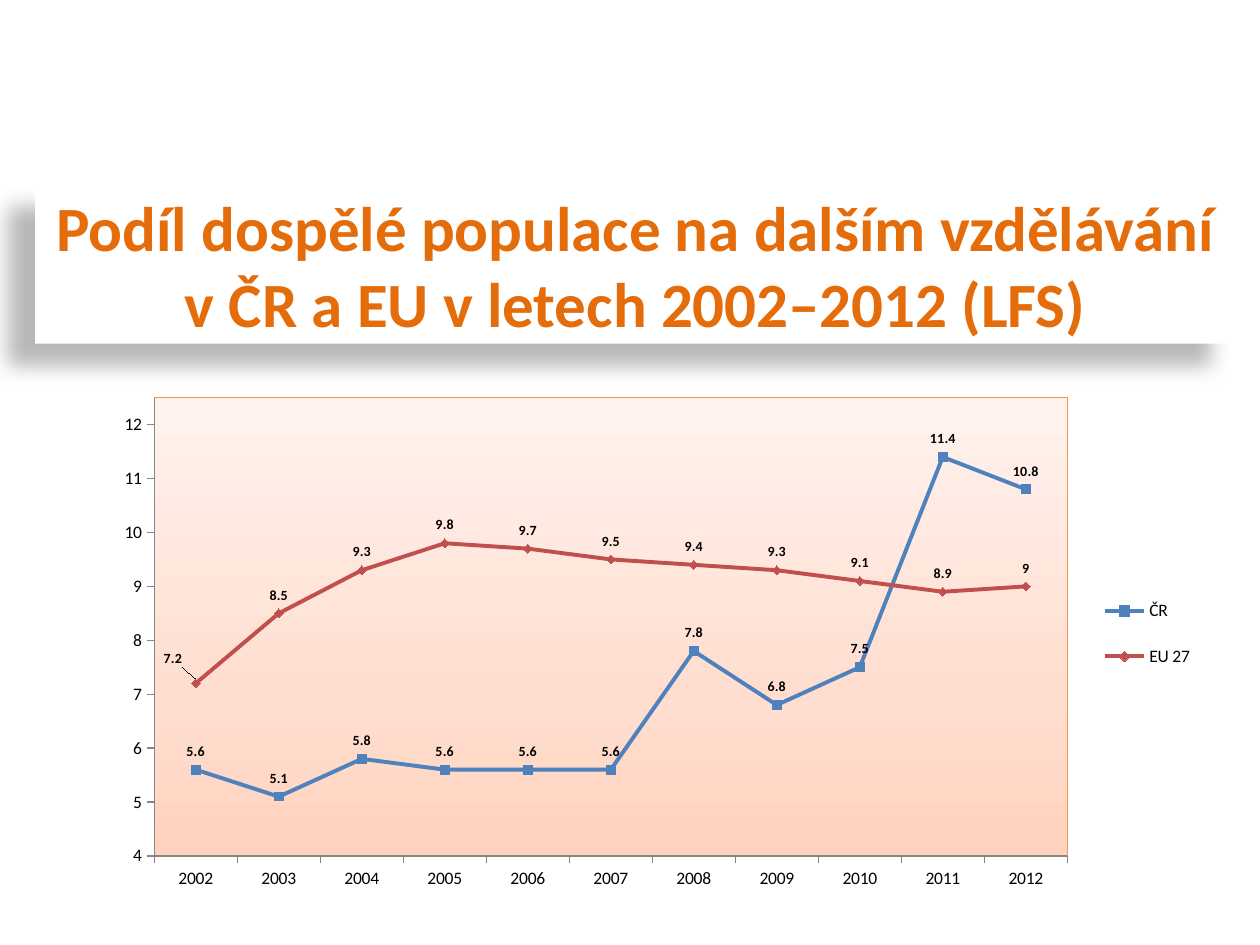
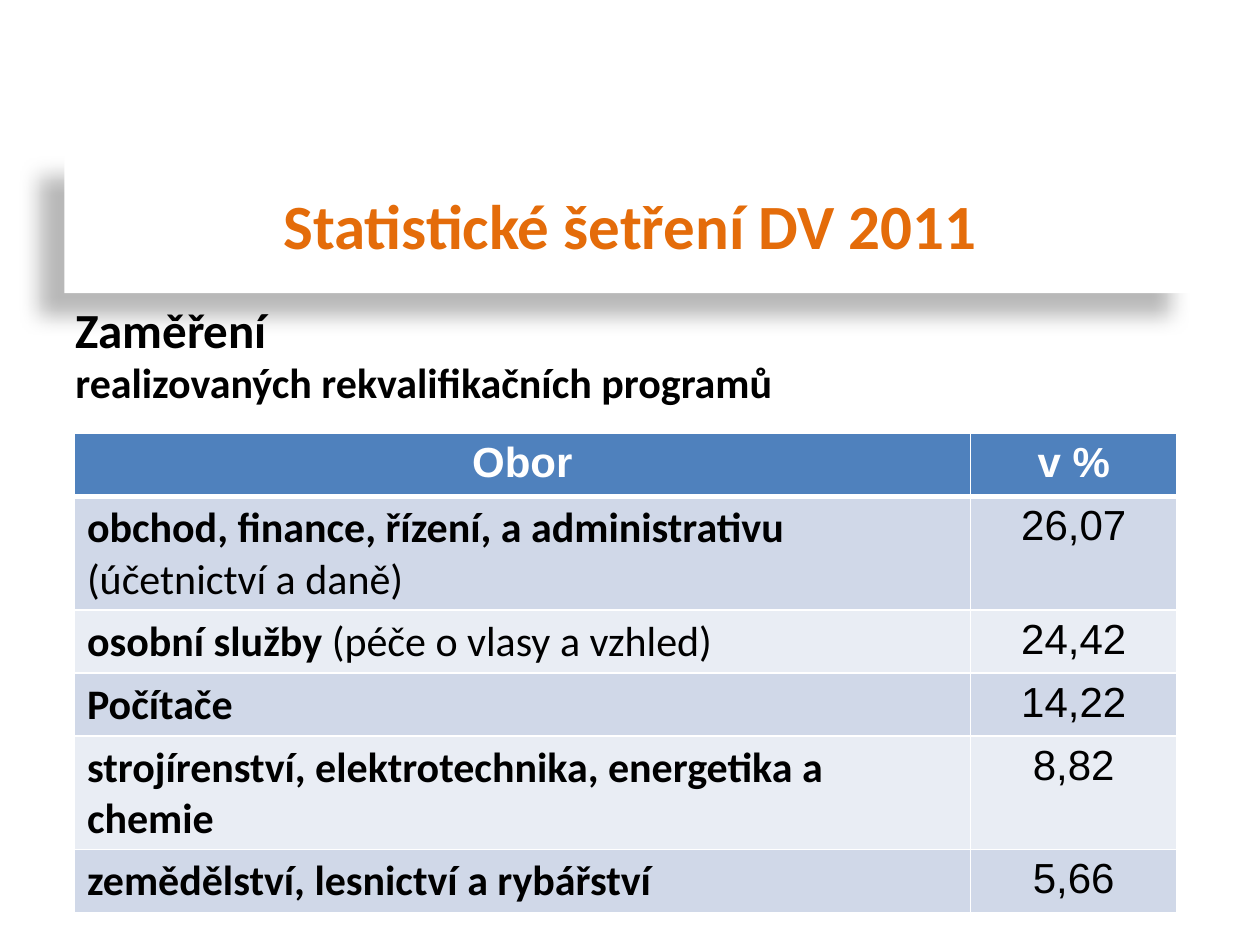
import pptx
import pptx.chart.data
import pptx.dml.color
import pptx.enum.chart
import pptx.enum.shapes
import pptx.enum.text
import pptx.oxml
import pptx.oxml.ns
import pptx.util

Cm = pptx.util.Cm
Pt = pptx.util.Pt
RGBColor = pptx.dml.color.RGBColor
ALIGN = pptx.enum.text.PP_ALIGN

WHITE = RGBColor(0xFF, 0xFF, 0xFF)
BLACK = RGBColor(0x00, 0x00, 0x00)
TITLE_ORANGE = RGBColor(0xE4, 0x6C, 0x0A)
FRAME_ORANGE = RGBColor(0xF7, 0x96, 0x46)
BLUE = RGBColor(0x4F, 0x81, 0xBD)
RED = RGBColor(0xC0, 0x50, 0x4D)
AXIS_GREY = RGBColor(0x86, 0x86, 0x86)
DARK_BAND = RGBColor(0xD0, 0xD8, 0xE8)
LIGHT_BAND = RGBColor(0xE9, 0xED, 0xF4)
PLOT_GRADIENT = (
    (0, RGBColor(0xFF, 0xD2, 0xBD)),
    (35, RGBColor(0xFF, 0xDE, 0xD0)),
    (100, RGBColor(0xFF, 0xF2, 0xED)),
)

TITLE_FONT = {"name": "Calibri", "size": Pt(36), "bold": True}
BODY_FONT = {"name": "Calibri", "size": Pt(24), "bold": True}
NUMBER_FONT = {"name": "Arial", "size": Pt(24), "bold": False}
CHART_FONT = {"name": "Calibri", "size": Pt(10), "bold": False}
LABEL_FONT = {"name": "Calibri", "size": Pt(8), "bold": True}

YEARS = [str(year) for year in range(2002, 2013)]
CZECH_SHARE = (5.6, 5.1, 5.8, 5.6, 5.6, 5.6, 7.8, 6.8, 7.5, 11.4, 10.8)
EU_SHARE = (7.2, 8.5, 9.3, 9.8, 9.7, 9.5, 9.4, 9.3, 9.1, 8.9, 9)
PROGRAMMES = (
    ("obchod, finance, řízení, a administrativu", " (účetnictví a daně)", "26,07"),
    ("osobní služby", " (péče o vlasy a vzhled)", "24,42"),
    ("Počítače", "", "14,22"),
    ("strojírenství, elektrotechnika, energetika a chemie", "", "8,82"),
    ("zemědělství, lesnictví a rybářství", "", "5,66"),
)


def apply_format(target, values):
    """Set every attribute of target that values names."""
    for name, value in values.items():
        setattr(target, name, value)


def style_font(font, values, color=BLACK):
    """Apply font values and a colour."""
    apply_format(font, values)
    font.color.rgb = color


def make_element(xml):
    """Make an element from XML that uses the a and c prefixes."""
    head, mark, tail = xml.partition(">")
    slash = "/" if head.endswith("/") else ""
    names = pptx.oxml.ns.nsdecls("a", "c")
    return pptx.oxml.parse_xml(f"{head.rstrip('/')} {names}{slash}{mark}{tail}")


def manual_layout(places, inner=False, edge=True):
    """Return a chart layout element for places such as x, y, w and h."""
    parts = ['<c:layoutTarget val="inner"/>'] if inner else []
    if edge:
        parts += [f'<c:{axis}Mode val="edge"/>' for axis in "xy"]
    parts += [f'<c:{key} val="{value}"/>' for key, value in places.items()]
    return make_element(
        f"<c:layout><c:manualLayout>{''.join(parts)}</c:manualLayout></c:layout>")


class Deck:
    """Hold the presentation, its style and the current slide."""

    def __init__(self):
        """Start a presentation of 4:3 slides."""
        self.presentation = pptx.Presentation()
        apply_format(self.presentation, {"slide_width": Cm(25.4), "slide_height": Cm(19.05)})
        self.slide = None

    def new_slide(self):
        """Add a blank white slide and make it current."""
        self.slide = self.presentation.slides.add_slide(self.presentation.slide_layouts[6])
        self.slide.background.fill.solid()
        self.slide.background.fill.fore_color.rgb = WHITE

    def text_run(self, paragraph, text, values, color=BLACK):
        """Add one run to a paragraph."""
        run = paragraph.add_run()
        run.text = text
        style_font(run.font, values, color)

    def title(self, lines, left, top, width, height):
        """Add a white title panel with a soft shadow to the lower left."""
        shape = self.slide.shapes.add_shape(
            pptx.enum.shapes.MSO_SHAPE.RECTANGLE, Cm(left), Cm(top), Cm(width), Cm(height))
        shape.fill.solid()
        shape.fill.fore_color.rgb = WHITE
        shape.line.fill.background()
        shape.shadow.inherit = False
        effects = shape._element.spPr.find(pptx.oxml.ns.qn("a:effectLst"))
        effects.append(make_element(
            f'<a:outerShdw blurRad="{Pt(11.8)}" dist="{Pt(19.7)}" dir="{141 * 60000}" '
            'algn="ctr" rotWithShape="0"><a:srgbClr val="000000">'
            '<a:alpha val="28000"/></a:srgbClr></a:outerShdw>'))
        frame = shape.text_frame
        apply_format(frame, {"word_wrap": True,
                             "vertical_anchor": pptx.enum.text.MSO_ANCHOR.MIDDLE})
        for index, line in enumerate(lines):
            paragraph = frame.add_paragraph() if index else frame.paragraphs[0]
            paragraph.alignment = ALIGN.CENTER
            self.text_run(paragraph, line, TITLE_FONT, TITLE_ORANGE)

    def subtitle(self, lines, left, top, width, height):
        """Add hanging bold lines given as text and size."""
        box = self.slide.shapes.add_textbox(Cm(left), Cm(top), Cm(width), Cm(height))
        frame = box.text_frame
        frame.word_wrap = True
        for index, (line, size) in enumerate(lines):
            paragraph = frame.add_paragraph() if index else frame.paragraphs[0]
            properties = paragraph._p.get_or_add_pPr()
            properties.set("marL", str(Cm(2.06)))
            properties.set("indent", str(Cm(-0.79)))
            paragraph.line_spacing = 0.8
            if index:
                paragraph.space_before = Pt(size * 0.2)
            self.text_run(paragraph, line, BODY_FONT | {"size": Pt(size)})

    def cell(self, cell, runs, fill, alignment, top=1, bottom=1):
        """Fill one table cell with runs, a colour and white borders."""
        properties = cell._tc.get_or_add_tcPr()
        for side, width in zip("LRTB", (1, 1, top, bottom)):
            properties.append(make_element(
                f'<a:ln{side} w="{Pt(width)}"><a:solidFill><a:srgbClr val="{WHITE}"/>'
                f"</a:solidFill></a:ln{side}>"))
        cell.fill.solid()
        cell.fill.fore_color.rgb = fill
        paragraph = cell.text_frame.paragraphs[0]
        paragraph.alignment = alignment
        for text, values, color in runs:
            if text:
                self.text_run(paragraph, text, values, color)

    def table(self, header, rows, left, top, widths, row_height):
        """Add a banded table of topics and shares."""
        count = len(rows) + 1
        table = self.slide.shapes.add_table(
            count, len(widths), Cm(left), Cm(top),
            Cm(sum(widths)), Cm(row_height * count)).table
        apply_format(table, {"first_row": False, "horz_banding": False})
        for column, width in zip(table.columns, widths):
            column.width = Cm(width)
        for row in table.rows:
            row.height = Cm(row_height)
        for index, text in enumerate(header):
            self.cell(table.cell(0, index), [(text, NUMBER_FONT | {"bold": True}, WHITE)],
                      BLUE, ALIGN.CENTER, bottom=3)
        for index, (topic, detail, share) in enumerate(rows, 1):
            fill = DARK_BAND if index % 2 else LIGHT_BAND
            border = 3 if index == 1 else 1
            runs = [(topic, BODY_FONT, BLACK), (detail, BODY_FONT | {"bold": False}, BLACK)]
            self.cell(table.cell(index, 0), runs, fill, ALIGN.LEFT, border)
            self.cell(table.cell(index, 1), [(share, NUMBER_FONT, BLACK)],
                      fill, ALIGN.CENTER, border)

    def line_chart(self, categories, series_styles, left, top, width, height):
        """Add a line chart from series given as name, values, colour and marker."""
        data = pptx.chart.data.CategoryChartData()
        data.categories = categories
        for name, values, _, _ in series_styles:
            data.add_series(name, values)
        chart = self.slide.shapes.add_chart(
            pptx.enum.chart.XL_CHART_TYPE.LINE_MARKERS,
            Cm(left), Cm(top), Cm(width), Cm(height), data).chart
        apply_format(chart, {"has_title": False, "has_legend": True})
        style_font(chart.font, CHART_FONT)
        chart.plots[0].vary_by_categories = False
        for series, (_, _, color, marker) in zip(chart.plots[0].series, series_styles):
            self.line_series(series, color, marker)
        self.axes(chart)
        self.plot_area(chart)
        apply_format(chart.legend, {"position": pptx.enum.chart.XL_LEGEND_POSITION.RIGHT,
                                    "include_in_layout": False})
        style_font(chart.legend.font, CHART_FONT)
        legend = chart.legend._element
        for layout in legend.findall(pptx.oxml.ns.qn("c:layout")):
            legend.remove(layout)
        position = legend.find(pptx.oxml.ns.qn("c:legendPos"))
        position.addnext(manual_layout({"x": 0.89, "y": 0.46, "w": 0.1, "h": 0.17}))
        return chart

    def line_series(self, series, color, marker):
        """Style one line with its markers and value labels."""
        series.smooth = False
        series.format.line.width = Pt(2.25)
        series.format.line.color.rgb = color
        apply_format(series.marker, {"style": marker, "size": 5})
        series.marker.format.fill.solid()
        series.marker.format.fill.fore_color.rgb = color
        series.marker.format.line.color.rgb = color
        labels = series.data_labels
        apply_format(labels, {"show_value": True,
                              "position": pptx.enum.chart.XL_LABEL_POSITION.ABOVE})
        style_font(labels.font, LABEL_FONT)

    def move_label(self, series, point, x, y):
        """Shift one value label by fractions of the chart size."""
        label = series.points[point].data_label
        style_font(label.font, LABEL_FONT)
        label.position = pptx.enum.chart.XL_LABEL_POSITION.ABOVE
        index = series._element.xpath(f"c:dLbls/c:dLbl/c:idx[@val='{point}']")[0]
        index.addnext(manual_layout({"x": x, "y": y}, edge=False))

    def axes(self, chart):
        """Style both axes and set the value range."""
        apply_format(chart.value_axis, {"minimum_scale": 4, "maximum_scale": 12.5,
                                        "major_unit": 1})
        for axis in (chart.category_axis, chart.value_axis):
            apply_format(axis, {"has_major_gridlines": False,
                                "major_tick_mark": pptx.enum.chart.XL_TICK_MARK.OUTSIDE,
                                "minor_tick_mark": pptx.enum.chart.XL_TICK_MARK.NONE})
            style_font(axis.tick_labels.font, CHART_FONT)
            axis.format.line.color.rgb = AXIS_GREY

    def plot_area(self, chart):
        """Place the plot area and give it a gradient and a frame."""
        area = chart._chartSpace.chart.plotArea
        for layout in area.findall(pptx.oxml.ns.qn("c:layout")):
            area.remove(layout)
        area.insert(0, manual_layout({"x": 0.07, "y": 0.2, "w": 0.8, "h": 0.67},
                                     inner=True))
        stops = "".join(f'<a:gs pos="{place * 1000}"><a:srgbClr val="{color}"/></a:gs>'
                        for place, color in PLOT_GRADIENT)
        area.append(make_element(
            f"<c:spPr><a:gradFill><a:gsLst>{stops}</a:gsLst>"
            f'<a:lin ang="{270 * 60000}" scaled="0"/></a:gradFill>'
            f'<a:ln w="{Pt(0.75)}"><a:solidFill><a:srgbClr val="{FRAME_ORANGE}"/>'
            "</a:solidFill></a:ln></c:spPr>"))


def main():
    """Build both slides and save them."""
    deck = Deck()
    markers = pptx.enum.chart.XL_MARKER_STYLE

    deck.new_slide()
    deck.title(("Podíl dospělé populace na dalším vzdělávání",
                "v ČR a EU v letech 2002–2012 (LFS)"), 0.71, 3.73, 24.21, 3.2)
    chart = deck.line_chart(YEARS, (("ČR", CZECH_SHARE, BLUE, markers.SQUARE),
                                    ("EU 27", EU_SHARE, RED, markers.DIAMOND)),
                            1.5, 5.26, 23.01, 13.79)
    deck.move_label(chart.plots[0].series[1], 0, -0.02, -0.01)

    deck.new_slide()
    deck.subtitle((("Zaměření", 28), ("realizovaných rekvalifikačních programů", 24)),
                  0, 6.15, 25.4, 3.38)
    deck.table(("Obor", "v %"), PROGRAMMES, 1.5, 8.74, (18.06, 4.17), 1.04)
    deck.title(("Statistické šetření DV 2011",), 1.3, 3.12, 22.81, 2.79)

    deck.presentation.save("out.pptx")


if __name__ == "__main__":
    main()
